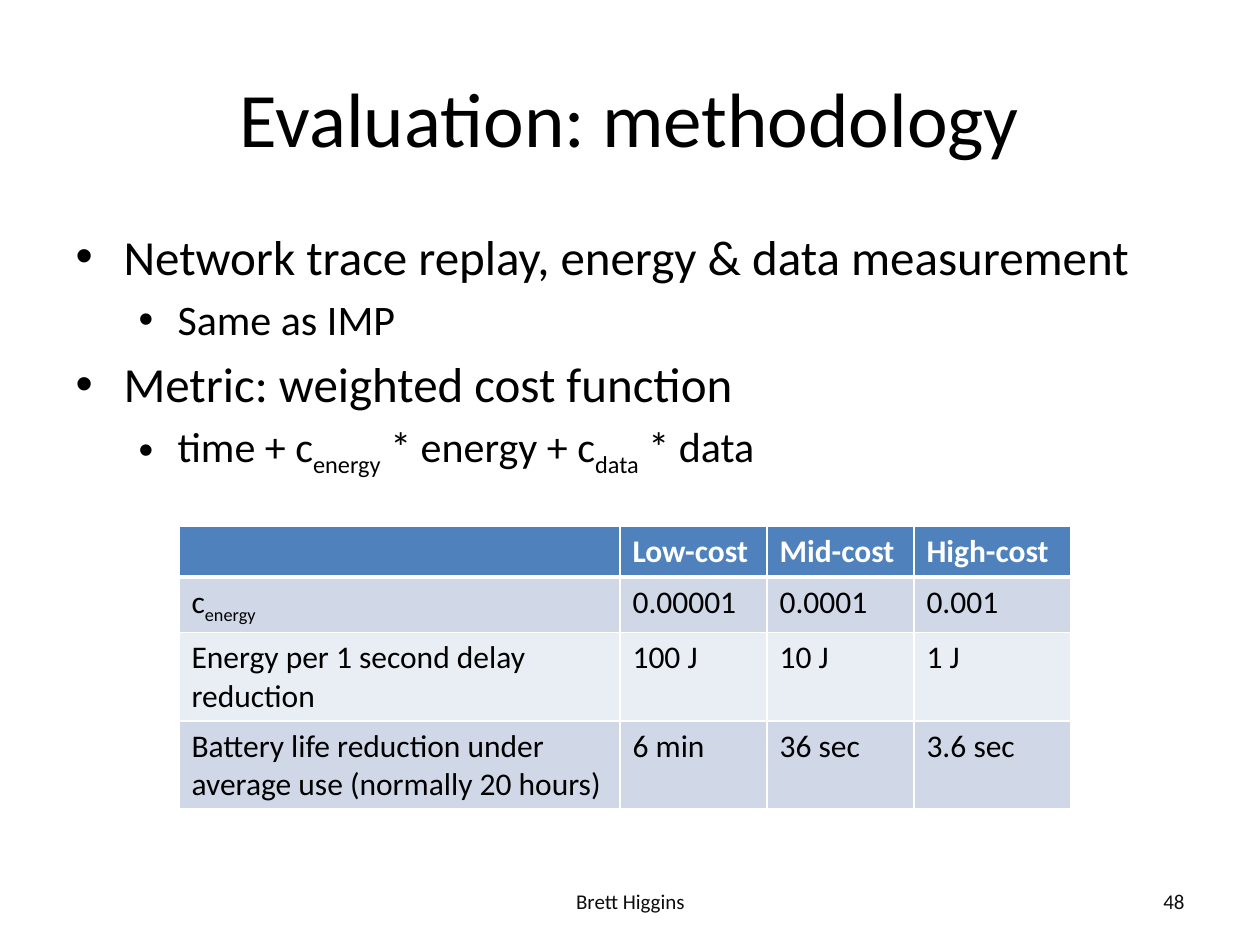
from pptx import Presentation
from pptx import util as u
from pptx.dml.color import RGBColor
from pptx.enum import text
from pptx.oxml.ns import qn
from lxml import etree

PX = 914400 / 126
FONT = "Calibri"
BLACK = RGBColor(0x00, 0x00, 0x00)
WHITE = RGBColor(0xFF, 0xFF, 0xFF)
FOOTER_GRAY = RGBColor(0x0D, 0x0D, 0x0D)
HEADER_BLUE = RGBColor(0x4F, 0x81, 0xBD)
BAND_DARK = RGBColor(0xD0, 0xD8, 0xE8)
BAND_LIGHT = RGBColor(0xE9, 0xED, 0xF4)

BULLETS = [
    (0, "Network trace replay, energy & data measurement"),
    (1, "Same as IMP"),
    (0, "Metric: weighted cost function"),
    (1, "time + c_energy_ * energy + c_data_ * data"),
]
BULLET_SIZES = [28, 24]
BULLET_INDENTS = [(48, 48), (102, 39)]

COST_ROWS = [
    ["", "Low-cost", "Mid-cost", "High-cost"],
    ["c_energy_", "0.00001", "0.0001", "0.001"],
    ["Energy per 1 second delay reduction", "100 J", "10 J", "1 J"],
    ["Battery life reduction under average use (normally 20 hours)",
     "6 min", "36 sec", "3.6 sec"],
]
COLUMN_WIDTHS = [441, 147, 147, 157]
ROW_HEIGHT = 51


def px(length):
    return u.Emu(round(length * PX))


def place(box, left, top, width, height):
    box.left, box.top = px(left), px(top)
    box.width, box.height = px(width), px(height)


def write(para, words, size, color, bold=False):
    for index, part in enumerate(words.split("_")):
        if not part:
            continue
        span = para.add_run()
        span.text = part
        span.font.name = FONT
        span.font.size = u.Pt(size)
        span.font.bold = bold
        span.font.color.rgb = color
        if index % 2:
            span._r.get_or_add_rPr().set("baseline", "-25000")


def add_bullet(para, margin, hanging):
    properties = para._p.get_or_add_pPr()
    properties.set("marL", str(px(margin)))
    properties.set("indent", str(-px(hanging)))
    etree.SubElement(properties, qn("a:buFont"), typeface="Arial")
    etree.SubElement(properties, qn("a:buChar"), char="•")


def fill_title(page):
    title = page.shapes.title
    place(title, 63, 38, 1134, 157)
    title.text_frame.vertical_anchor = text.MSO_ANCHOR.MIDDLE
    para = title.text_frame.paragraphs[0]
    para.alignment = text.PP_ALIGN.CENTER
    write(para, "Evaluation: methodology", 44, BLACK)


def fill_body(page):
    body = page.placeholders[1]
    place(body, 63, 220, 1134, 624)
    frame = body.text_frame
    for index, (level, words) in enumerate(BULLETS):
        para = frame.add_paragraph() if index else frame.paragraphs[0]
        para.level = level
        add_bullet(para, *BULLET_INDENTS[level])
        size = BULLET_SIZES[level]
        para.space_before = u.Pt(0.2 * size if index else 0)
        write(para, words, size, BLACK)


def add_footer(page, words, left, width, alignment):
    box = page.shapes.add_textbox(px(left), px(876), px(width), px(50))
    frame = box.text_frame
    frame.word_wrap = True
    frame.vertical_anchor = text.MSO_ANCHOR.MIDDLE
    para = frame.paragraphs[0]
    para.alignment = alignment
    write(para, words, 12, FOOTER_GRAY)


def add_borders(cell, widths):
    properties = cell._tc.get_or_add_tcPr()
    for side, width in widths.items():
        line = etree.SubElement(properties, qn(f"a:ln{side}"), w=str(u.Pt(width)))
        solid = etree.SubElement(line, qn("a:solidFill"))
        etree.SubElement(solid, qn("a:srgbClr"), val=str(WHITE))


def add_cost_table(page):
    frame = page.shapes.add_table(
        len(COST_ROWS), len(COLUMN_WIDTHS), px(179), px(526),
        px(sum(COLUMN_WIDTHS)), px(ROW_HEIGHT * len(COST_ROWS)))
    table = frame.table
    for column, width in zip(table.columns, COLUMN_WIDTHS):
        column.width = px(width)
    for row, values in enumerate(COST_ROWS):
        header = row == 0
        band = HEADER_BLUE if header else BAND_DARK if row % 2 else BAND_LIGHT
        widths = {"L": 1, "R": 1, "T": 3 if row == 1 else 1, "B": 3 if header else 1}
        for col, words in enumerate(values):
            cell = table.cell(row, col)
            add_borders(cell, widths)
            cell.fill.solid()
            cell.fill.fore_color.rgb = band
            write(cell.text_frame.paragraphs[0], words, 18,
                  WHITE if header else BLACK, header)


def main():
    deck = Presentation()
    deck.slide_width, deck.slide_height = px(1260), px(945)
    page = deck.slides.add_slide(deck.slide_layouts[1])
    fill_title(page)
    fill_body(page)
    add_footer(page, "Brett Higgins", 431, 399, text.PP_ALIGN.CENTER)
    add_footer(page, "48", 903, 294, text.PP_ALIGN.RIGHT)
    add_cost_table(page)
    deck.save("out.pptx")


if __name__ == "__main__":
    main()
